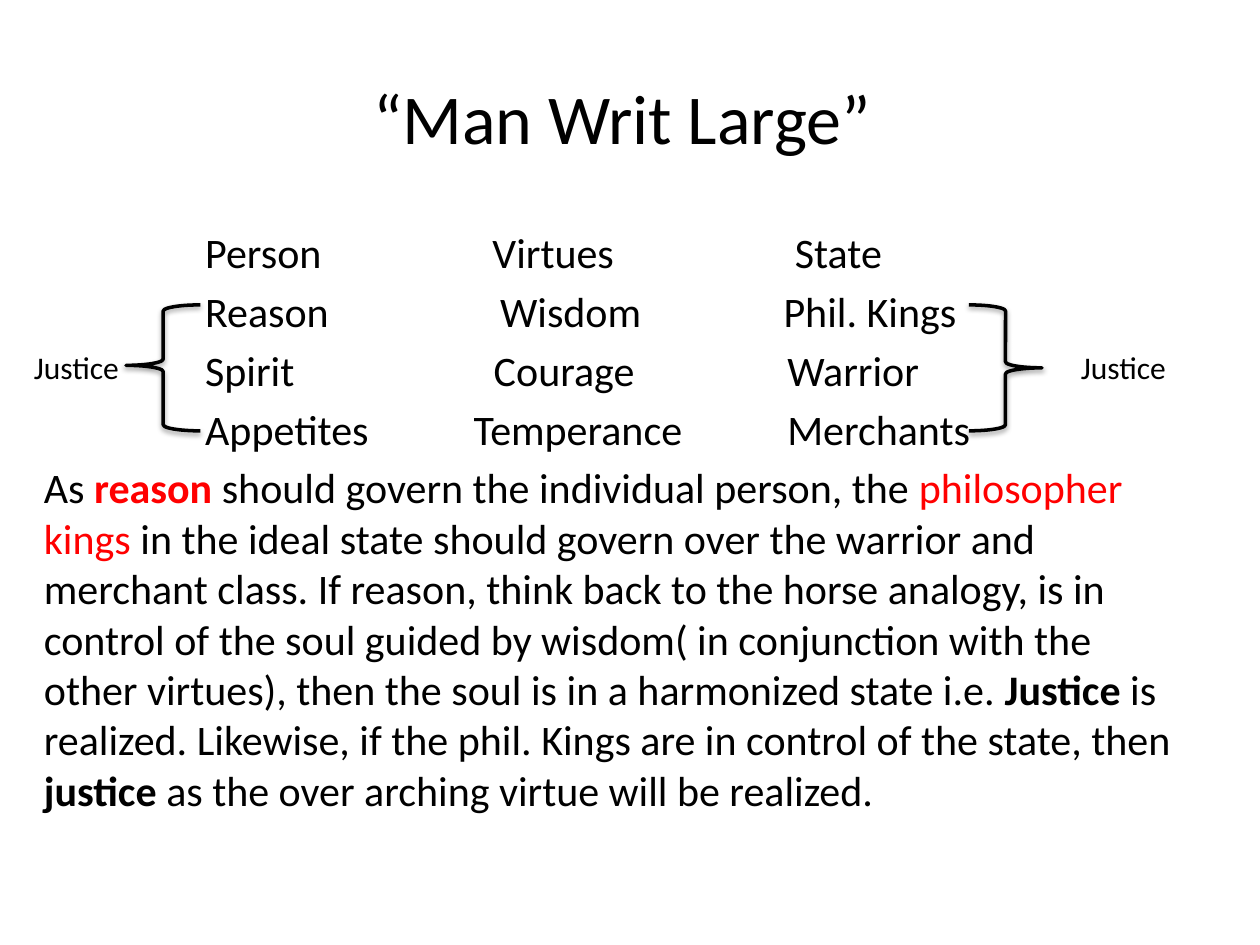
import pptx
import pptx.util
import pptx.oxml
import pptx.oxml.ns
import pptx.dml.color
import pptx.enum.shapes
import pptx.enum.text
from lxml import etree

Inches, Pt = pptx.util.Inches, pptx.util.Pt
PP_ALIGN = pptx.enum.text.PP_ALIGN
ANCHOR = pptx.enum.text.MSO_ANCHOR
SHAPE = pptx.enum.shapes.MSO_SHAPE
qn = pptx.oxml.ns.qn

BLACK = pptx.dml.color.RGBColor(0x00, 0x00, 0x00)
RED = pptx.dml.color.RGBColor(0xFF, 0x00, 0x00)

# Each row: its words, and the tab stops (inches) that they start at
ROWS = [
    (("Person", "Virtues", "State"), (1.28, 3.56, 5.96)),
    (("Reason", "Wisdom", "Phil. Kings"), (1.28, 3.62, 5.87)),
    (("Spirit", "Courage", "Warrior"), (1.28, 3.57, 5.9)),
    (("Appetites", "Temperance", "Merchants"), (1.28, 3.41, 5.9)),
]

EXPLANATION = [
    ("As ", {}),
    ("reason", {"bold": True, "color": RED}),
    (" should govern the individual person, the ", {}),
    ("philosopher kings", {"color": RED}),
    (" in the ideal state should govern over the warrior and merchant class. "
     "If reason, think back to the horse analogy, is in control of the soul "
     "guided by wisdom( in conjunction with the other virtues), then the soul "
     "is in a harmonized state i.e. ", {}),
    ("Justice", {"bold": True}),
    (" is realized. Likewise, if the phil. Kings are in control of the state, "
     "then ", {}),
    ("justice", {"bold": True}),
    (" as the over arching virtue will be realized.", {}),
]


def add_run(p, text, size, color=BLACK, bold=False):
    r = p.add_run()
    r.text = text
    font = {"name": "Calibri", "size": Pt(size), "bold": bold}
    for name, value in font.items():
        setattr(r.font, name, value)
    r.font.color.rgb = color


def add_box(s, left, top, width, height, anchor=ANCHOR.TOP):
    sp = s.shapes.add_textbox(Inches(left), Inches(top), Inches(width), Inches(height))
    tf = sp.text_frame
    tf.word_wrap = True
    tf.vertical_anchor = anchor
    return tf


def add_label(s, text, left, top, width, height, size, align=PP_ALIGN.LEFT,
              anchor=ANCHOR.TOP):
    p = add_box(s, left, top, width, height, anchor).paragraphs[0]
    p.alignment = align
    add_run(p, text, size)


def set_tabs(p, stops):
    tab_list = etree.SubElement(p._p.get_or_add_pPr(), qn("a:tabLst"))
    for stop in stops:
        etree.SubElement(tab_list, qn("a:tab"), pos=str(Inches(stop)), algn="l")


def add_body(s):
    tf = add_box(s, 0.25, 1.75, 9.25, 4.95)
    p = tf.paragraphs[0]
    for words, stops in ROWS:
        p.space_before = Pt(4.8)
        set_tabs(p, stops)
        add_run(p, "".join("\t" + word for word in words), 24)
        p = tf.add_paragraph()
    p.space_before = Pt(4.8)
    for text, style in EXPLANATION:
        add_run(p, text, 24, **style)


def add_brace(s, kind, left, width, point):
    sp = s.shapes.add_shape(kind, Inches(left), Inches(2.42), Inches(width), Inches(1))
    sp.adjustments[0] = 0.083
    sp.adjustments[1] = point
    sp.fill.background()
    sp.line.color.rgb = BLACK
    sp.line.width = Pt(2)
    # Soft shadow straight below
    sp.shadow.inherit = False
    effects = sp._element.spPr.find(qn("a:effectLst"))
    shadow = etree.SubElement(effects, qn("a:outerShdw"), blurRad=str(Pt(3.1)),
                              dist=str(Pt(1.6)), dir="5400000", rotWithShape="0")
    color = etree.SubElement(shadow, qn("a:srgbClr"), val=str(BLACK))
    etree.SubElement(color, qn("a:alpha"), val="38000")


def main():
    prs = pptx.Presentation()
    prs.slide_width, prs.slide_height = Inches(10), Inches(7.5)
    s = prs.slides.add_slide(prs.slide_layouts[6])

    # Title and text
    add_label(s, "“Man Writ Large” ", 0.5, 0.3, 9, 1.25, 40,
              PP_ALIGN.CENTER, ANCHOR.MIDDLE)
    add_body(s)

    # Braces with their labels
    add_brace(s, SHAPE.LEFT_BRACE, 1, 0.59, 0.48)
    add_label(s, "Justice", 0.17, 2.71, 0.92, 0.4, 18)
    add_brace(s, SHAPE.RIGHT_BRACE, 7.69, 0.58, 0.5)
    add_label(s, "Justice", 8.48, 2.71, 1, 0.4, 18)

    prs.save("out.pptx")


if __name__ == "__main__":
    main()
